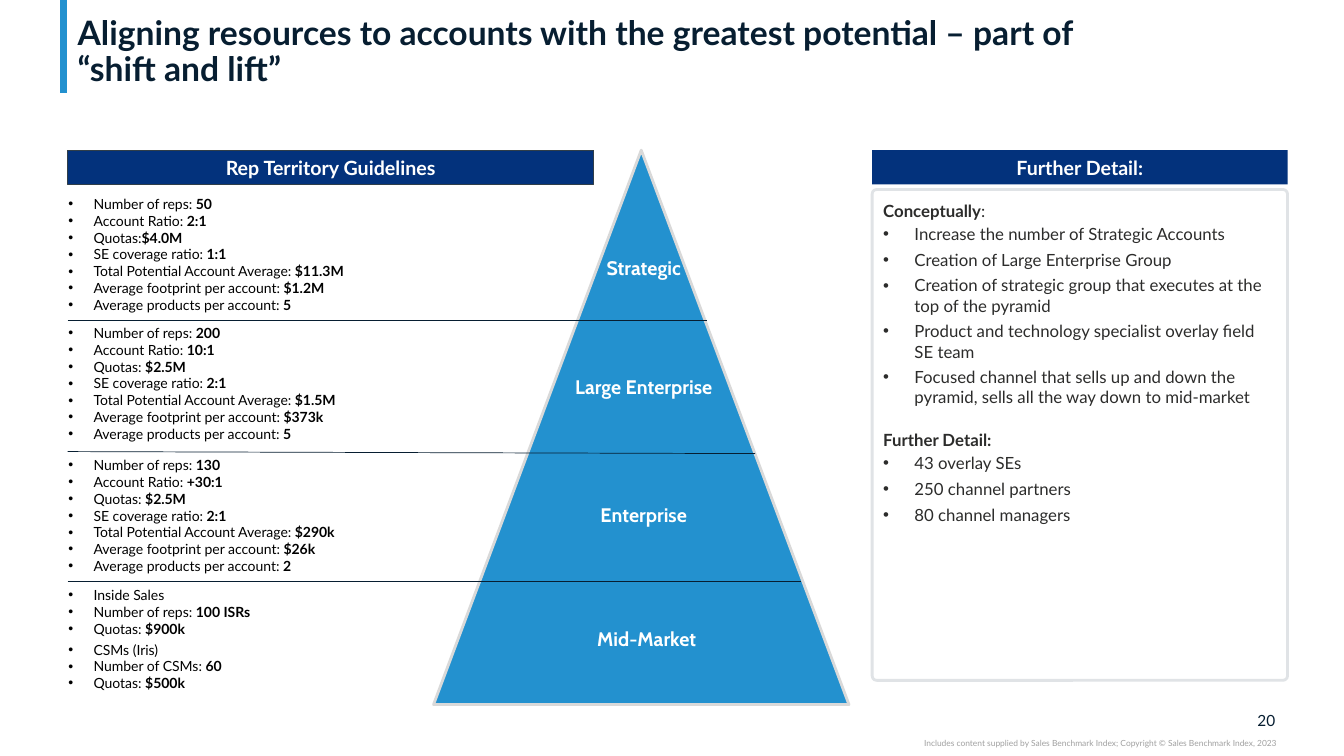
from dataclasses import dataclass

from lxml.etree import SubElement
from pptx import Presentation
from pptx.dml.color import RGBColor
from pptx.enum.shapes import MSO_CONNECTOR, MSO_SHAPE
from pptx.enum.text import MSO_ANCHOR, MSO_AUTO_SIZE, PP_ALIGN
from pptx.oxml.ns import qn
from pptx.util import Pt

PX = 9144  # EMU per px, 100 px to the inch


@dataclass(frozen=True)
class Theme:
    font: str = "Lato"
    label_font: str = "Cabin"
    ink: str = "071E31"
    black: str = "000000"
    body: str = "2C2C2B"
    muted: str = "A0A0A0"
    white: str = "FFFFFF"
    blue: str = "2391CF"
    navy: str = "03327C"
    navy_edge: str = "303E48"
    pyramid_edge: str = "D9D9D9"
    panel_edge: str = "E0E3E6"
    title_size: int = 24
    heading_size: int = 14
    detail_size: int = 12
    number_size: int = 11
    list_size: int = 10
    footer_size: int = 6


T = Theme()

METRICS = ("Number of reps", "Account Ratio", "Quotas", "SE coverage ratio",
           "Total Potential Account Average", "Average footprint per account",
           "Average products per account")

# Pyramid label, its left, top and width
TIERS = (("Strategic", 554, 249, 169), ("Large Enterprise", 554, 367, 169),
         ("Enterprise", 520, 494, 237), ("Mid-Market", 523, 617, 237))

# Left y, right x and right y of the rules between tiers
DIVIDERS = ((318, 701, 318), (448, 749, 450), (577, 794, 577))

CONCEPTS = ("Increase the number of Strategic Accounts",
            "Creation of Large Enterprise Group",
            "Creation of strategic group that executes at the top of the pyramid",
            "Product and technology specialist overlay field SE team",
            "Focused channel that sells up and down the pyramid, "
            "sells all the way down to mid-market")
TEAMS = ("43 overlay SEs", "250 channel partners", "80 channel managers")


def rgb(color):
    return RGBColor.from_string(color)


def place(sp, x, y, w, h):
    sp.left, sp.top, sp.width, sp.height = (v * PX for v in (x, y, w, h))


def write(tf, text, *, size, color, font=T.font, align=PP_ALIGN.LEFT,
          indent=0, before=0, after=0, spacing=1.0):
    """Add a paragraph; text between bars is bold, a newline breaks the line."""
    p = tf.add_paragraph() if tf.paragraphs[0].runs else tf.paragraphs[0]
    pPr = p._p.get_or_add_pPr()
    pPr.set("marL", str(indent * PX))
    pPr.set("indent", str(-indent * PX))
    if indent:
        SubElement(pPr, qn("a:buFont"), typeface="Arial")
        SubElement(pPr, qn("a:buChar"), char="•")
    else:
        SubElement(pPr, qn("a:buNone"))
    p.alignment, p.line_spacing = align, spacing
    p.space_before, p.space_after = Pt(before), Pt(after)
    for i, part in enumerate(text.split("|")):
        for j, line in enumerate(part.split("\n")):
            if j:
                p.add_line_break()
            if line:
                r = p.add_run()
                r.text = line
                r.font.name, r.font.size = font, Pt(size)
                r.font.bold = i % 2 == 1
                r.font.color.rgb = rgb(color)


def frame(sp, inset=(10, 5), anchor=MSO_ANCHOR.TOP):
    tf = sp.text_frame
    tf.word_wrap, tf.auto_size = True, MSO_AUTO_SIZE.NONE
    tf.vertical_anchor = anchor
    tf.margin_left = tf.margin_right = inset[0] * PX
    tf.margin_top = tf.margin_bottom = inset[1] * PX
    return tf


def text_box(slide, box, **kwargs):
    sp = slide.shapes.add_textbox(0, 0, 0, 0)
    place(sp, *box)
    return frame(sp, **kwargs)


def shape(slide, kind, box, fill, edge=None, width=2):
    sp = slide.shapes.add_shape(kind, 0, 0, 0, 0)
    place(sp, *box)
    sp.shadow.inherit = False
    sp.fill.solid()
    sp.fill.fore_color.rgb = rgb(fill)
    if edge:
        sp.line.color.rgb, sp.line.width = rgb(edge), Pt(width)
    else:
        sp.line.fill.background()
    return sp


def rule(slide, ends, color, width):
    c = slide.shapes.add_connector(MSO_CONNECTOR.STRAIGHT, *(v * PX for v in ends))
    c.line.color.rgb, c.line.width = rgb(color), Pt(width)
    SubElement(c._element.spPr, qn("a:effectLst"))


def banner(slide, box, text, edge=None):
    sp = shape(slide, MSO_SHAPE.RECTANGLE, box, T.navy, edge, 0.75)
    write(frame(sp, anchor=MSO_ANCHOR.MIDDLE), f"|{text}", size=T.heading_size,
          color=T.white, align=PP_ALIGN.CENTER)


def guideline_list(slide, y, h, lines):
    tf = text_box(slide, (58, y, 473, h))
    for line in lines:
        write(tf, line, size=T.list_size, color=T.black, indent=25)


def metrics(*values):
    return [f"{name}: |{value}" for name, value in zip(METRICS, values)]


def detail_panel(slide, body):
    box = (865, 188, 412, 487)
    panel = shape(slide, MSO_SHAPE.ROUNDED_RECTANGLE, box, T.white, T.panel_edge)
    panel.adjustments[0] = 0.011
    panel._element.addnext(body._element)  # list sits above the panel
    place(body, *box)
    tf = frame(body, inset=(11, 11))
    style = dict(size=T.detail_size, color=T.body)
    for heading, items, gap in (("|Conceptually|:", CONCEPTS, 0),
                                ("|Further Detail:", TEAMS, 14)):
        write(tf, heading, before=gap, **style)
        for item in items:
            write(tf, item, indent=31, before=2, after=2, **style)


def main():
    prs = Presentation()
    prs.slide_width, prs.slide_height = 1333 * PX, 750 * PX
    slide = prs.slides.add_slide(prs.slide_layouts[1])
    title, body = slide.placeholders

    # Title and accent
    rule(slide, (63, 0, 63, 92), T.blue, 5)
    place(title, 67, 4, 1199, 84)
    write(frame(title, (10, 0), MSO_ANCHOR.BOTTOM),
          "|Aligning resources to accounts with the greatest potential – part of\n"
          "“shift and lift”", size=T.title_size, color=T.ink, spacing=0.9)

    # Pyramid
    shape(slide, MSO_SHAPE.ISOSCELES_TRIANGLE, (430, 149, 412, 550),
          T.blue, T.pyramid_edge)
    for y, right, right_y in DIVIDERS:
        rule(slide, (67, y, right, right_y), T.ink, 0.5)
    for name, x, y, w in TIERS:
        write(text_box(slide, (x, y, w, 34)), f"|{name}", size=T.heading_size,
              color=T.white, font=T.label_font, align=PP_ALIGN.CENTER)

    # Territory guidelines
    banner(slide, (67, 149, 522, 34), "Rep Territory Guidelines", T.navy_edge)
    strategic = metrics("50", "2:1", "$4.0M", "1:1", "$11.3M", "$1.2M", "5")
    strategic[2] = "Quotas:|$4.0M"
    guideline_list(slide, 189, 128, strategic)
    guideline_list(slide, 317, 128, metrics(
        "200", "10:1", "$2.5M", "2:1", "$1.5M", "$373k", "5"))
    guideline_list(slide, 448, 128, metrics(
        "130", "+30:1", "$2.5M", "2:1", "$290k", "$26k", "2"))
    guideline_list(slide, 577, 61, (
        "Inside Sales", "Number of reps: |100 ISRs", "Quotas: |$900k"))
    guideline_list(slide, 631, 61, (
        "CSMs (Iris)", "Number of CSMs: |60", "Quotas: |$500k"))

    # Further detail
    banner(slide, (865, 149, 412, 34), "Further Detail:")
    detail_panel(slide, body)

    # Footer
    write(text_box(slide, (1232, 705, 33, 19), inset=(0, 0), anchor=MSO_ANCHOR.MIDDLE),
          "20", size=T.number_size, color=T.ink, align=PP_ALIGN.RIGHT)
    write(text_box(slide, (750, 732, 516, 10), inset=(0, 0)),
          "Includes content supplied by Sales Benchmark Index; "
          "Copyright © Sales Benchmark Index, 2023",
          size=T.footer_size, color=T.muted, align=PP_ALIGN.RIGHT)

    prs.save("out.pptx")


if __name__ == "__main__":
    main()
